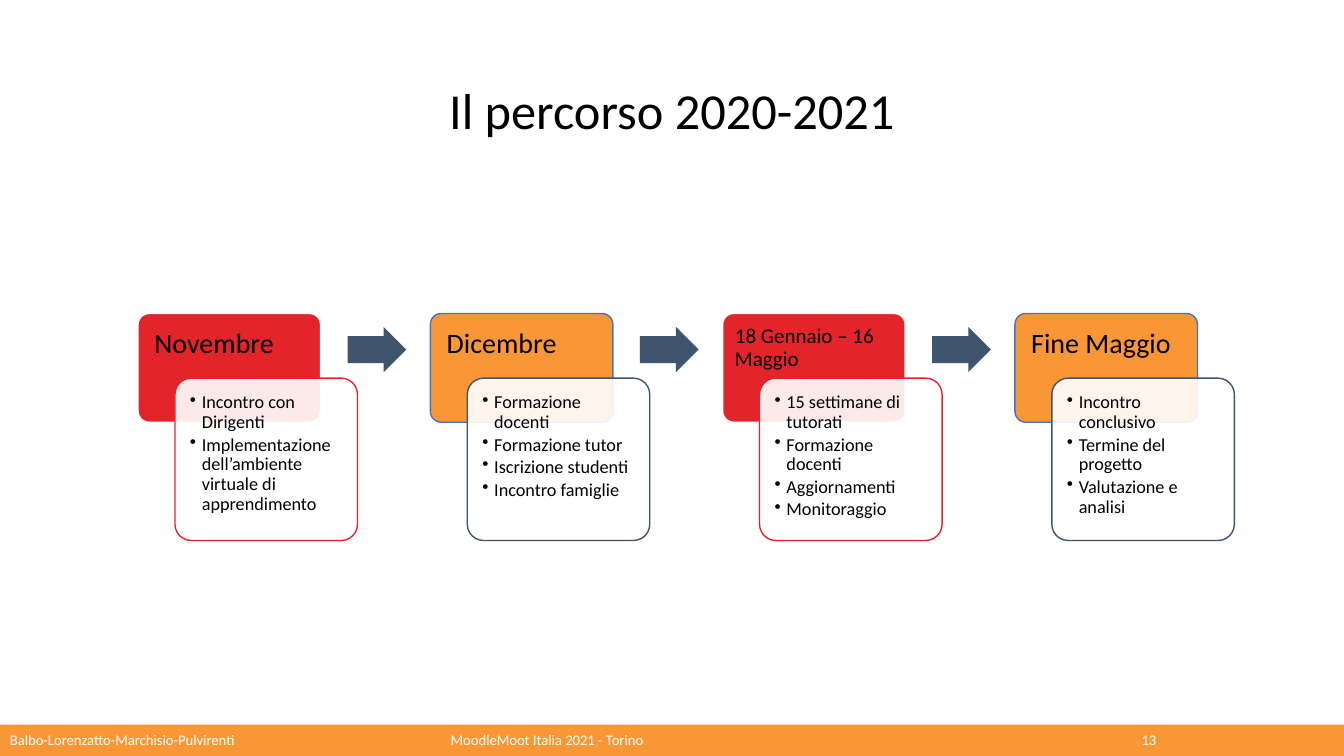
from lxml import etree
from pptx import Presentation
from pptx.dml.color import RGBColor
from pptx.enum import shapes, text
from pptx.oxml.ns import qn
from pptx.util import Cm, Pt

FONT = "Calibri"
RED, ORANGE, NAVY, BLUE = "E3242B", "F99737", "3F546D", "4472C4"
WHITE, BLACK = "FFFFFF", "000000"
LEFT, TOP, PITCH = 3.48, 7.9, 7.366  # first step and distance between steps, cm

# Heading, heading size, fill, heading line, detail line, bullets
STEPS = [
    ("Novembre", 20, RED, WHITE, RED,
     ["Incontro con Dirigenti",
      "Implementazione dell’ambiente virtuale di apprendimento"]),
    ("Dicembre", 20, ORANGE, BLUE, NAVY,
     ["Formazione docenti", "Formazione tutor",
      "Iscrizione studenti", "Incontro famiglie"]),
    ("18 Gennaio – 16 Maggio", 15, RED, WHITE, RED,
     ["15 settimane di tutorati", "Formazione docenti",
      "Aggiornamenti", "Monitoraggio"]),
    ("Fine Maggio", 20, ORANGE, BLUE, NAVY,
     ["Incontro conclusivo", "Termine del progetto",
      "Valutazione e analisi"]),
]


def color(value):
    return RGBColor.from_string(value)


def add_box(s, kind, x, y, w, h, fill, line=None, adj=()):
    sp = s.shapes.add_shape(kind, Cm(x), Cm(y), Cm(w), Cm(h))
    sp.shadow.inherit = False
    sp.fill.solid()
    sp.fill.fore_color.rgb = color(fill)
    if line:
        sp.line.color.rgb = color(line)
        sp.line.width = Pt(1)
    else:
        sp.line.fill.background()
    for i, value in enumerate(adj):
        sp.adjustments[i] = value
    return sp


def set_alpha(sp, percent):
    clr = sp.fill._xPr.find(qn("a:solidFill"))[0]
    etree.SubElement(clr, qn("a:alpha"), val=str(percent * 1000))


def set_bullet(p, indent):
    pPr = p._p.get_or_add_pPr()
    pPr.set("marL", str(Cm(indent)))
    pPr.set("indent", str(-Cm(indent)))
    etree.SubElement(pPr, qn("a:buChar"), char="•")


def add_text(sp, lines, size, hex_color=BLACK, inset=None, bullet=False,
             align=text.PP_ALIGN.LEFT, anchor=text.MSO_ANCHOR.TOP):
    tf = sp.text_frame
    tf.word_wrap = True
    tf.vertical_anchor = anchor
    if inset is not None:
        tf.margin_left = tf.margin_right = tf.margin_top = Cm(inset)
        tf.margin_bottom = Cm(inset)
    for i, line in enumerate(lines):
        p = tf.add_paragraph() if i else tf.paragraphs[0]
        if bullet:
            set_bullet(p, 0.3)
        p.alignment = align
        p.line_spacing = 0.9
        p.space_after = Pt(2 if bullet else 0)
        r = p.add_run()
        r.text = line
        r.font.name = FONT
        r.font.size = Pt(size)
        r.font.color.rgb = color(hex_color)


def add_label(s, x, y, w, h, line, size, hex_color=BLACK,
              align=text.PP_ALIGN.LEFT):
    sp = s.shapes.add_textbox(Cm(x), Cm(y), Cm(w), Cm(h))
    add_text(sp, [line], size, hex_color, align=align,
             anchor=text.MSO_ANCHOR.MIDDLE)


def add_step(s, x, heading, size, fill, line, detail_line, bullets):
    rounded = shapes.MSO_SHAPE.ROUNDED_RECTANGLE
    head = add_box(s, rounded, x, TOP, 4.6, 2.74, fill, line, [0.1])
    add_text(head, [heading], size, inset=0.33 if size == 20 else 0.23)
    detail = add_box(s, rounded, x + 0.93, TOP + 1.63, 4.6, 4.09,
                     WHITE, detail_line, [0.1])
    set_alpha(detail, 90)
    add_text(detail, bullets, 13, inset=0.26, bullet=True)


def add_footer(s):
    add_box(s, shapes.MSO_SHAPE.RECTANGLE, 0, 18.26, 33.87, 0.79, ORANGE)
    for x, w, line in [(0, 10.36, "Balbo-Lorenzatto-Marchisio-Pulvirenti"),
                       (11.11, 8, "MoodleMoot Italia 2021 - Torino"),
                       (28.52, 2, "13")]:
        add_label(s, x, 18.3, w, 0.74, line, 10.5, WHITE)


def main():
    prs = Presentation()
    prs.slide_width, prs.slide_height = Cm(33.87), Cm(19.05)
    s = prs.slides.add_slide(prs.slide_layouts[6])

    # Footer and title
    add_footer(s)
    add_label(s, 2.33, 1.88, 29.21, 1.95, "Il percorso 2020-2021", 36,
              align=text.PP_ALIGN.CENTER)

    # Steps, with an arrow between neighbours
    for i, step in enumerate(STEPS):
        x = LEFT + i * PITCH
        add_step(s, x, *step)
        if i < len(STEPS) - 1:
            add_box(s, shapes.MSO_SHAPE.RIGHT_ARROW, x + 5.28, TOP + 0.34,
                    1.48, 1.14, NAVY, adj=[0.6, 0.5])

    prs.save("out.pptx")


if __name__ == "__main__":
    main()
